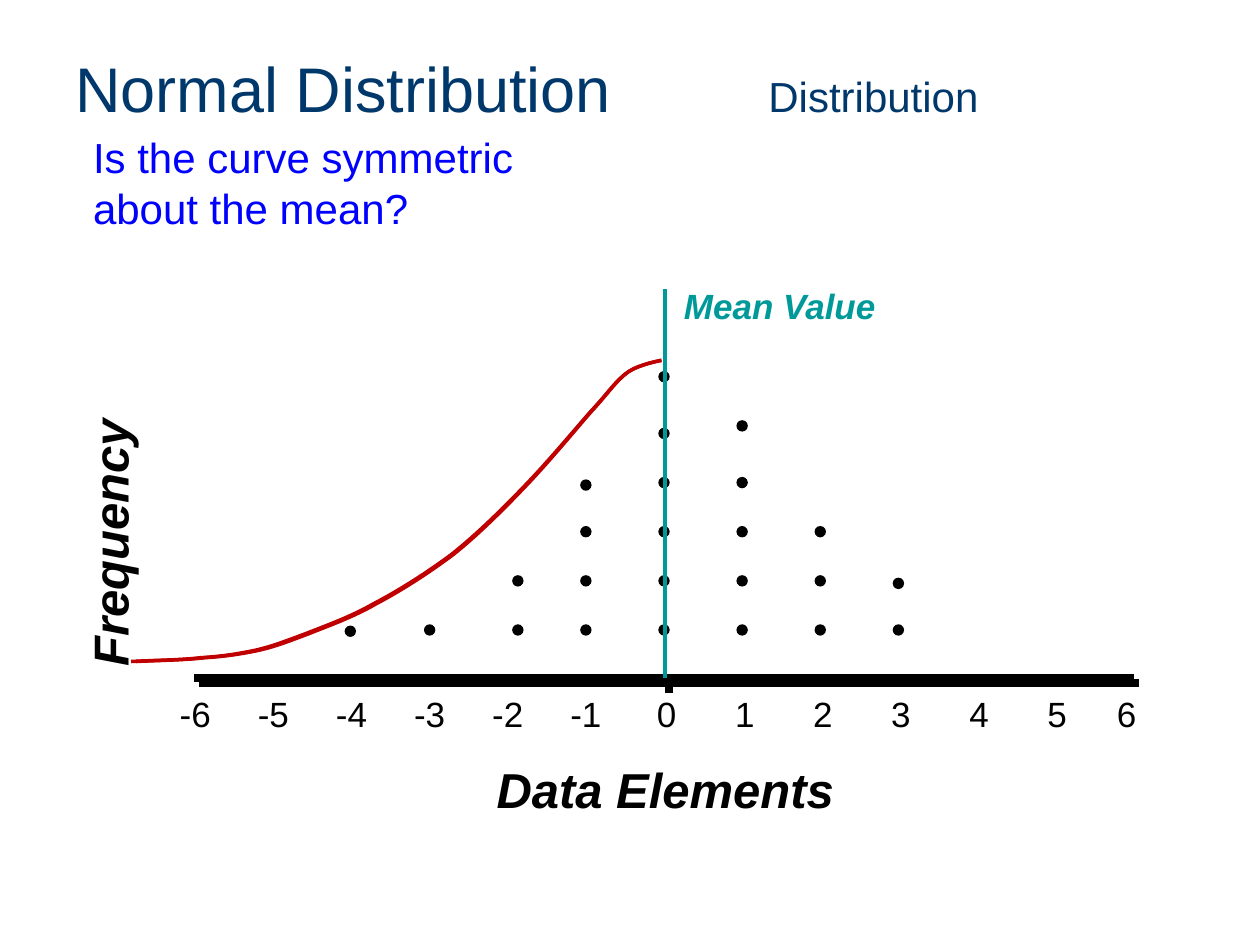
from dataclasses import dataclass

from lxml.etree import SubElement
from pptx import Presentation
from pptx.dml.color import RGBColor
from pptx.enum.shapes import MSO_CONNECTOR as Link, MSO_SHAPE as Shape
from pptx.enum.text import MSO_ANCHOR as Anchor, PP_ALIGN as Align
from pptx.oxml.ns import qn
from pptx.util import Inches, Pt

BLACK = RGBColor(0, 0, 0)
TEAL = RGBColor(0x00, 0x99, 0x99)
NAVY = RGBColor(0x00, 0x38, 0x6B)
BLUE = RGBColor(0x00, 0x00, 0xFF)
RED = RGBColor(0xC0, 0x00, 0x00)

STEP = 0.62  # width of one unit on the axis
ZERO = 5.27  # middle of the zero label
ROWS = [4.96 - 0.39 * row for row in range(4)]
DOT = 0.08


@dataclass
class Label:
    runs: list[tuple[str, int]]  # words and size
    box: tuple[float, float, float, float]
    color: RGBColor = BLACK
    bold: bool = False
    align: Align = Align.LEFT
    wrap: bool = True
    turn: int = 0


@dataclass
class Rule:
    start: tuple[float, float]
    end: tuple[float, float]
    color: RGBColor = BLACK
    width: float = 4.5


@dataclass
class Stack:
    left: float
    tops: list[float]


LABELS = [
    Label([("Normal Distribution ", 36), ("\t\t\tDistribution", 24)],
          (0.5, 0.3, 9, 0.78), NAVY),
    Label([("Is the curve symmetric about the mean?", 24)],
          (0.64, 0.99, 4.24, 0.91), BLUE),
    Label([("Frequency", 28)], (-0.4, 4.02, 2.53, 0.57),
          bold=True, align=Align.CENTER, turn=270),
    Label([("Data Elements", 28)], (1.58, 5.98, 7.4, 0.57),
          bold=True, align=Align.CENTER),
    Label([("Mean Value", 20)], (5.33, 2.21, 1.94, 0.43), TEAL,
          bold=True, wrap=False),
]
AXIS = [
    Rule((1.58, 5.42), (9.04, 5.42)),
    Rule((5.31, 5.35), (5.31, 5.5)),
    Rule((1.54, 5.38), (9, 5.38)),
]
MEAN = Rule((5.28, 5.38), (5.28, 2.29), TEAL, 2.25)
STACKS = [
    Stack(2.74, [4.97]),
    Stack(3.37, ROWS[:1]),
    Stack(4.07, ROWS[:2]),
    Stack(4.61, ROWS[:3] + [3.81]),
    Stack(5.23, ROWS + [3.4, 2.95]),
    Stack(5.85, ROWS + [3.34]),
    Stack(6.47, ROWS[:3]),
    Stack(7.09, [4.96, 4.59]),
]
# Start, then two handles and an end for each arc
CURVE = [
    (1.08, 5.25),
    (1.27, 5.24), (1.46, 5.24), (1.63, 5.22),
    (1.79, 5.21), (1.92, 5.19), (2.06, 5.16),
    (2.19, 5.13), (2.29, 5.09), (2.45, 5.03),
    (2.6, 4.97), (2.8, 4.9), (2.99, 4.79),
    (3.18, 4.69), (3.4, 4.55), (3.6, 4.4),
    (3.8, 4.24), (4.01, 4.03), (4.19, 3.84),
    (4.37, 3.65), (4.56, 3.42), (4.69, 3.27),
    (4.83, 3.12), (4.89, 3.02), (4.99, 2.95),
    (5.08, 2.89), (5.25, 2.86), (5.25, 2.86),
]


def add_label(slide, label: Label) -> None:
    box = slide.shapes.add_textbox(*map(Inches, label.box))
    box.rotation = label.turn
    frame = box.text_frame
    frame.word_wrap = label.wrap
    frame.vertical_anchor = Anchor.MIDDLE
    para = frame.paragraphs[0]
    para.alignment = label.align
    for words, size in label.runs:
        run = para.add_run()
        run.text = words
        style = {"name": "Arial", "size": Pt(size),
                 "bold": label.bold, "italic": label.bold}
        for key, value in style.items():
            setattr(run.font, key, value)
        run.font.color.rgb = label.color


def add_rule(slide, rule: Rule) -> None:
    line = slide.shapes.add_connector(
        Link.STRAIGHT, *map(Inches, rule.start + rule.end))
    line.line.color.rgb = rule.color
    line.line.width = Pt(rule.width)
    SubElement(line._element.spPr, qn("a:effectLst"))


def add_stack(slide, stack: Stack) -> None:
    for top in stack.tops:
        dot = slide.shapes.add_shape(
            Shape.OVAL, *map(Inches, (stack.left, top, DOT, DOT)))
        dot.shadow.inherit = False
        dot.fill.solid()
        dot.fill.fore_color.rgb = BLACK
        dot.line.color.rgb = BLACK
        dot.line.width = Pt(0.75)


def add_curve(slide, left: float) -> None:
    """Draw the curve from the given left edge up to its fixed right end."""
    first, last = CURVE[0][0], CURVE[-1][0]
    ratio = (last - left) / (last - first)
    points = [(Inches(last - (last - x) * ratio), Inches(y)) for x, y in CURVE]
    pen = slide.shapes.build_freeform(*points[0])
    pen.add_line_segments(points[1:], close=False)
    curve = pen.convert_to_shape()
    curve.shadow.inherit = False
    curve.fill.background()
    curve.line.color.rgb = RED
    curve.line.width = Pt(2)
    # Turn every three straight segments into one Bezier arc
    route = curve._element.spPr.find(".//" + qn("a:path"))
    lines = route.findall(qn("a:lnTo"))
    for i in range(0, len(lines), 3):
        arc = SubElement(route, qn("a:cubicBezTo"))
        for line in lines[i:i + 3]:
            arc.append(line[0])
            route.remove(line)


def add_scale(slide) -> None:
    for value in range(-6, 7):
        wide = 0.47 if value < 0 else 0.31
        mid = 8.92 if value == 6 else ZERO + STEP * value
        add_label(slide, Label([(str(value), 20)],
                               (mid - wide / 2, 5.45, wide, 0.43),
                               align=Align.CENTER, wrap=False))


def main() -> None:
    deck = Presentation()
    deck.slide_width, deck.slide_height = Inches(10), Inches(7.5)
    slide = deck.slides.add_slide(deck.slide_layouts[6])
    for rule in AXIS:
        add_rule(slide, rule)
    for stack in STACKS:
        add_stack(slide, stack)
    add_scale(slide)
    add_rule(slide, MEAN)
    for label in LABELS:
        add_label(slide, label)
    for left in (1.08, 1.04):
        add_curve(slide, left)
    deck.save("out.pptx")


if __name__ == "__main__":
    main()
